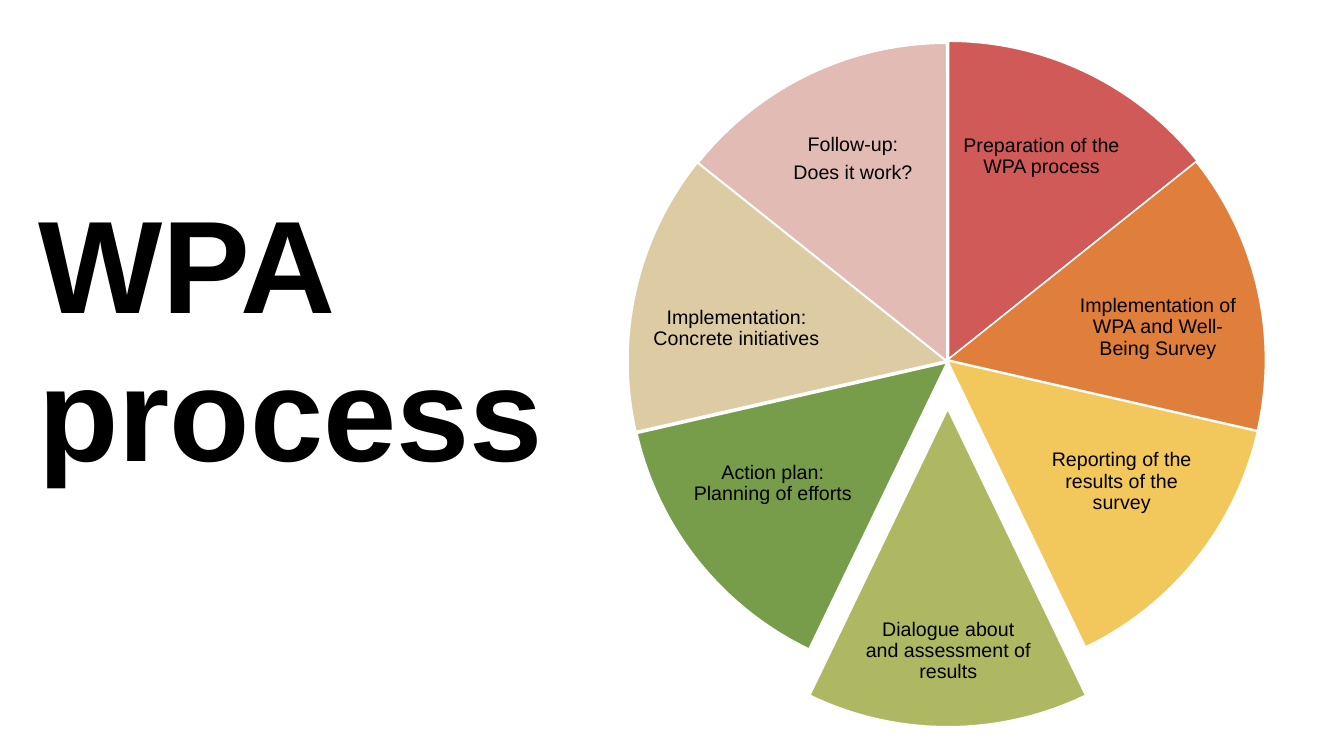
from pptx import Presentation
from pptx.dml.color import RGBColor
from pptx.enum.shapes import MSO_SHAPE as Shape
from pptx.enum.text import MSO_ANCHOR as Anchor, MSO_AUTO_SIZE as AutoSize, PP_ALIGN as Align
from pptx.util import Inches, Pt

# Each step, clockwise from the top: text, colour, pie corner, label box
STEPS = [
    (["Preparation of the WPA process"], "D05A57", (6.26, 0.41), (9.47, 1.01, 1.72, 1.09)),
    (["Implementation of WPA and Well-Being Survey"], "E07E3C", (6.25, 0.42), (10.57, 2.67, 1.83, 1.16)),
    (["Reporting of the results of the survey"], "F2C75C", (6.25, 0.43), (10.3, 4.18, 1.65, 1.2)),
    (["Dialogue about and assessment of results"], "AEB862", (6.25, 0.91), (8.56, 5.86, 1.69, 1.2)),
    (["Action plan: Planning of efforts"], "789D4A", (6.24, 0.45), (6.84, 4.2, 1.65, 1.2)),
    (["Implementation: Concrete initiatives"], "DDCBA4", (6.23, 0.43), (6.39, 2.68, 1.83, 1.16)),
    (["Follow-up:", "Does it work?"], "E1BBB4", (6.24, 0.43), (7.6, 1.03, 1.72, 1.09)),
]
DIAMETER = 6.3
FULL_TURN = 216  # 360 degrees in pie adjustment units
TOP = 162  # twelve o'clock in the same units


def colour(value):
    return RGBColor.from_string(value)


class ProcessSlide:
    font_name = "Arial"
    ink = "000000"
    edge = "FFFFFF"

    def __init__(self, page):
        self.page = page

    def style(self, para, size, bold, spacing):
        para.line_spacing = spacing
        para.font.name = self.font_name
        para.font.size = Pt(size)
        para.font.bold = bold
        para.font.color.rgb = colour(self.ink)

    def frame(self, box, inset, anchor):
        """Prepare the text frame of a box with one inset on all sides."""
        frame = box.text_frame
        frame.word_wrap = True
        frame.auto_size = AutoSize.NONE
        frame.vertical_anchor = anchor
        frame.margin_left = frame.margin_right = Inches(inset)
        frame.margin_top = frame.margin_bottom = Inches(inset)
        return frame

    def title(self, text, bounds):
        box = self.page.shapes.title
        box.left, box.top, box.width, box.height = map(Inches, bounds)
        frame = self.frame(box, 0, Anchor.TOP)
        frame.text = text
        para = frame.paragraphs[0]
        para.alignment = Align.LEFT
        self.style(para, 94, True, 0.94)

    def slice(self, corner, fill, start, end):
        pie = self.page.shapes.add_shape(
            Shape.PIE, *map(Inches, (*corner, DIAMETER, DIAMETER)))
        pie.adjustments[0] = start
        pie.adjustments[1] = end
        pie.shadow.inherit = False
        pie.fill.solid()
        pie.fill.fore_color.rgb = colour(fill)
        pie.line.color.rgb = colour(self.edge)
        pie.line.width = Pt(1)

    def label(self, lines, bounds):
        box = self.page.shapes.add_textbox(*map(Inches, bounds))
        frame = self.frame(box, 0.02, Anchor.MIDDLE)
        frame.text = "\n".join(lines)
        for para in frame.paragraphs:
            para.alignment = Align.CENTER
            para.space_after = Pt(5)
            self.style(para, 14, False, 0.9)


def main():
    deck = Presentation()
    deck.slide_width, deck.slide_height = Inches(13.33), Inches(7.5)
    slide = ProcessSlide(deck.slides.add_slide(deck.slide_layouts[5]))
    slide.title("WPA process", (0.38, 1.93, 5.25, 4.45))
    sweep = FULL_TURN / len(STEPS)
    for index, (lines, fill, corner, bounds) in enumerate(STEPS):
        start = (TOP + index * sweep) % FULL_TURN
        slide.slice(corner, fill, start, (start + sweep) % FULL_TURN)
        slide.label(lines, bounds)
    deck.save("out.pptx")


if __name__ == "__main__":
    main()
